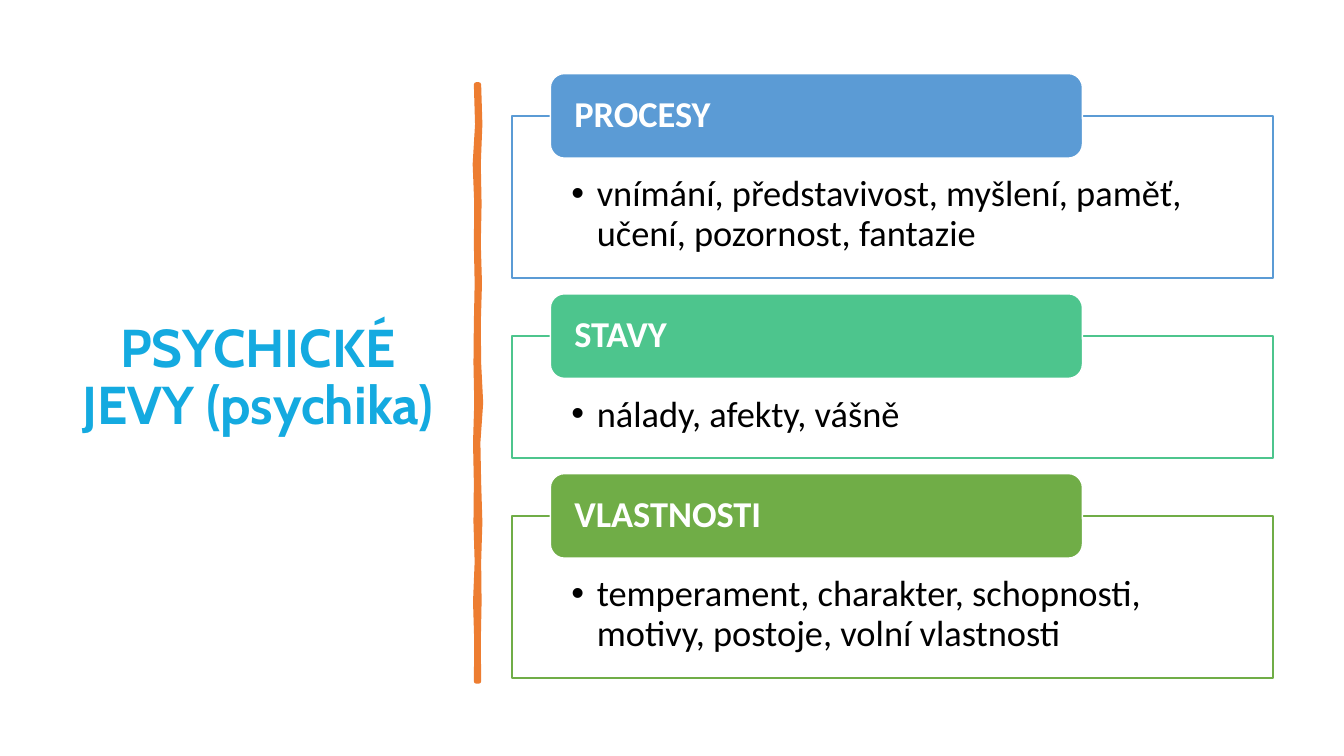
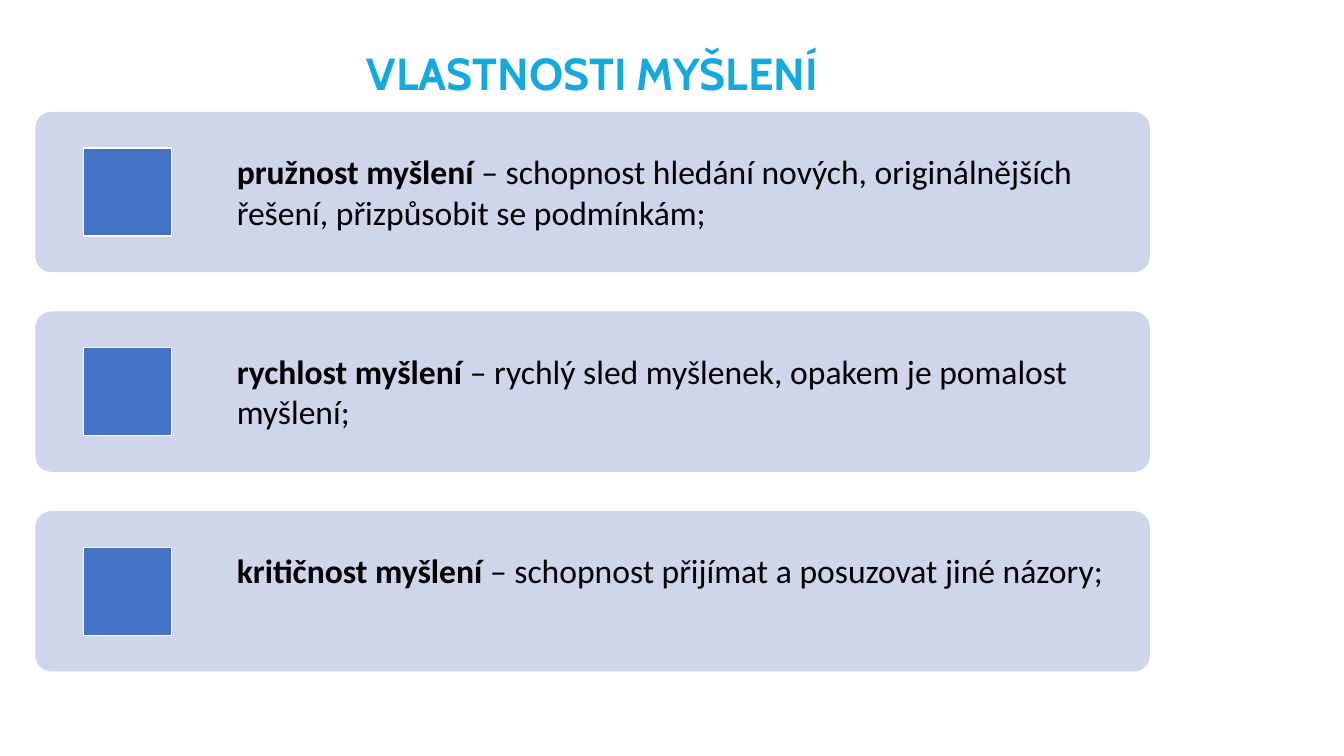
from dataclasses import dataclass

from lxml.etree import SubElement
from pptx import Presentation
from pptx.dml.color import RGBColor
from pptx.enum.shapes import MSO_SHAPE
from pptx.enum.text import MSO_ANCHOR, PP_ALIGN
from pptx.oxml.ns import qn
from pptx.util import Cm, Pt


@dataclass(frozen=True)
class Theme:
    title_font: str = "Cabin"
    body_font: str = "Calibri"
    title: str = "14AAE0"
    text: str = "000000"
    white: str = "FFFFFF"
    orange: str = "ED7D31"
    blue: str = "5B9BD5"
    mint: str = "4DC58D"
    green: str = "70AD47"
    card: str = "CFD5EA"
    icon: str = "4472C4"
    side_title_size: int = 38
    top_title_size: int = 32
    panel_size: int = 26
    card_size: int = 24


theme = Theme()


def style_text(shape, size, color, margins, anchor, font=theme.body_font,
               bold=False, align=PP_ALIGN.LEFT, spacing=0.9):
    """Set frame and paragraph style; margins are left, top, right, bottom in cm."""
    frame = shape.text_frame
    frame.word_wrap = True
    frame.vertical_anchor = anchor
    (frame.margin_left, frame.margin_top,
     frame.margin_right, frame.margin_bottom) = [Cm(margin) for margin in margins]
    paragraph = frame.paragraphs[0]
    paragraph.alignment = align
    paragraph.line_spacing = spacing
    paragraph.font.name = font
    paragraph.font.size = Pt(size)
    paragraph.font.bold = bold
    paragraph.font.color.rgb = RGBColor.from_string(color)


def add_block(slide, kind, box, fill, line=None):
    """Add a flat preset shape; box is left, top, width, height in cm."""
    shape = slide.shapes.add_shape(kind, *[Cm(length) for length in box])
    shape.shadow.inherit = False
    shape.fill.solid()
    shape.fill.fore_color.rgb = RGBColor.from_string(fill)
    if line:
        shape.line.color.rgb = RGBColor.from_string(line)
        shape.line.width = Pt(1)
    else:
        shape.line.fill.background()
    return shape


presentation = Presentation()
presentation.slide_width = Cm(33.87)
presentation.slide_height = Cm(19.05)

# Slides with their titles
titles = [
    ("PSYCHICKÉ JEVY (psychika)", theme.side_title_size, (1.75, 1.78, 9.5, 15.52)),
    ("VLASTNOSTI MYŠLENÍ", theme.top_title_size, (0.89, 1.02, 28.09, 1.8)),
]
slides = []
for text, size, box in titles:
    slide = presentation.slides.add_slide(presentation.slide_layouts[6])
    title = slide.shapes.add_textbox(*[Cm(length) for length in box])
    title.text_frame.text = text
    style_text(title, size, theme.title, (0.25, 0.13, 0.25, 0.13), MSO_ANCHOR.MIDDLE,
               font=theme.title_font, bold=True, align=PP_ALIGN.CENTER)
    slides.append(slide)
phenomena_slide, thinking_slide = slides

# Slide 1: hand-drawn divider, its edges sampled at equal steps
divider_top, divider_height, divider_center = 2.13, 15.04, 12.03
right_edge = [0.04, 0.07, 0.03, 0.05, 0.03, 0.06, 0.03, 0.04,
              0.09, 0.02, 0.04, 0.07, 0.04, 0.05, 0.03, 0.04]
left_edge = [-0.03, 0.0, -0.06, -0.02, -0.03, -0.01, -0.03, -0.04,
             -0.02, -0.05, -0.03, -0.04, -0.01, -0.05, -0.02, -0.03]
step = divider_height / (len(right_edge) - 1)
outline = [
    [(Cm(divider_center + offset), Cm(divider_top + index * step))
     for index, offset in enumerate(edge)]
    for edge in (right_edge, left_edge)
]
points = outline[0] + outline[1][::-1]
builder = phenomena_slide.shapes.build_freeform(*points[0])
builder.add_line_segments(points[1:], close=True)
divider = builder.convert_to_shape()
divider.shadow.inherit = False
divider.fill.solid()
divider.fill.fore_color.rgb = RGBColor.from_string(theme.orange)
divider.line.color.rgb = RGBColor.from_string(theme.orange)
divider.line.width = Pt(3.25)

# Slide 1: stacked panels with heading tabs
panels = [
    ("PROCESY", "vnímání, představivost, myšlení, paměť, učení, pozornost, fantazie",
     theme.blue, 4.09),
    ("STAVY", "nálady, afekty, vášně", theme.mint, 3.07),
    ("VLASTNOSTI", "temperament, charakter, schopnosti, motivy, postoje, volní vlastnosti",
     theme.green, 4.09),
]
panel_top, panel_gap, tab_height = 2.92, 1.46, 2.13
for heading, body, color, height in panels:
    panel = add_block(phenomena_slide, MSO_SHAPE.RECTANGLE,
                      (12.9, panel_top, 19.18, height), theme.white, color)
    panel.text_frame.text = body
    properties = panel.text_frame.paragraphs[0]._p.get_or_add_pPr()
    properties.set("marL", str(Cm(0.64)))
    properties.set("indent", str(Cm(-0.64)))
    SubElement(properties, qn("a:buFont"), typeface="Arial")
    SubElement(properties, qn("a:buChar"), char="•")
    style_text(panel, theme.panel_size, theme.text, (1.5, 1.5, 1.5, 0.5), MSO_ANCHOR.TOP)

    tab = add_block(phenomena_slide, MSO_SHAPE.ROUNDED_RECTANGLE,
                    (13.87, panel_top - tab_height / 2, 13.41, tab_height),
                    color, theme.white)
    tab.text_frame.text = heading
    style_text(tab, theme.panel_size, theme.white, (0.5, 0, 0.5, 0), MSO_ANCHOR.MIDDLE,
               bold=True)
    panel_top += height + panel_gap

# Slide 2: cards with a square marker
cards = [
    ("pružnost myšlení",
     " – schopnost hledání nových, originálnějších řešení, přizpůsobit se podmínkám;"),
    ("rychlost myšlení", " – rychlý sled myšlenek, opakem je pomalost myšlení;"),
    ("kritičnost myšlení", " – schopnost přijímat a posuzovat jiné názory;"),
]
card_height, card_pitch, marker_size = 4.04, 5.03, 2.22
for index, (term, meaning) in enumerate(cards):
    top = 2.82 + index * card_pitch
    card = add_block(thinking_slide, MSO_SHAPE.ROUNDED_RECTANGLE,
                     (0.89, top, 28.09, card_height), theme.card)
    card.adjustments[0] = 0.1
    paragraph = card.text_frame.paragraphs[0]
    for text, bold in ((term, True), (meaning, False)):
        run = paragraph.add_run()
        run.text = text
        run.font.bold = bold
    style_text(card, theme.card_size, theme.text, (4.96, 0.87, 0.31, 0.3),
               MSO_ANCHOR.TOP, bold=None, spacing=1.0)
    add_block(thinking_slide, MSO_SHAPE.RECTANGLE,
              (2.11, top + (card_height - marker_size) / 2, marker_size, marker_size),
              theme.icon, theme.white)

presentation.save("out.pptx")
